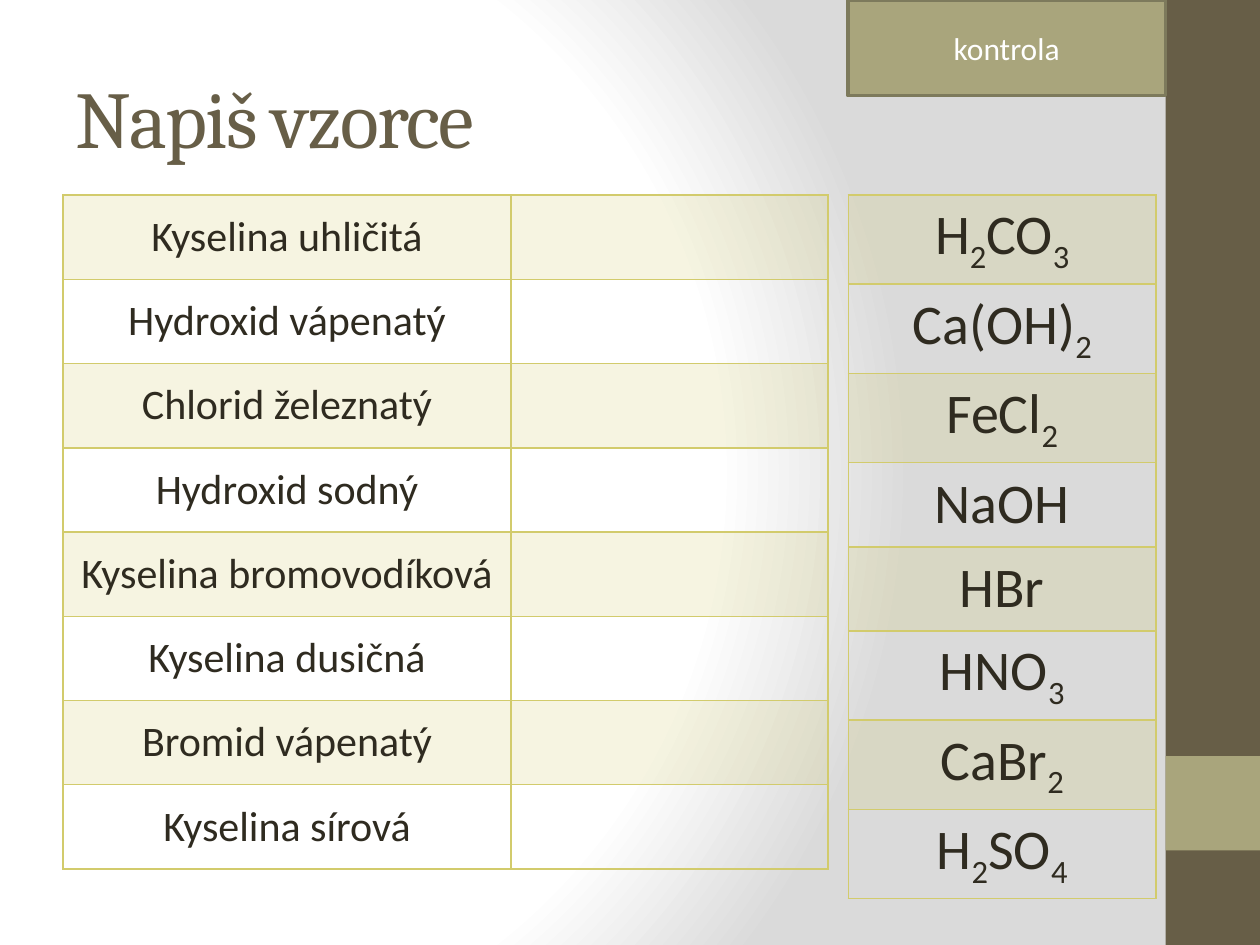
from dataclasses import dataclass
from itertools import groupby

from pptx import Presentation, util as u
from pptx.dml.color import RGBColor
from pptx.enum import shapes, text
from pptx.oxml import parse_xml

NS = 'xmlns:a="http://schemas.openxmlformats.org/drawingml/2006/main"'
HEX = {
    "dark": "675E47", "olive": "A9A57C", "edge": "7D7A5C", "line": "D2CB6C",
    "ink": "2F2B20", "white": "FFFFFF", "gray": "DADADA",
}
PAIRS = [
    ("Kyselina uhličitá", "H2CO3"),
    ("Hydroxid vápenatý", "Ca(OH)2"),
    ("Chlorid železnatý", "FeCl2"),
    ("Hydroxid sodný", "NaOH"),
    ("Kyselina bromovodíková", "HBr"),
    ("Kyselina dusičná", "HNO3"),
    ("Bromid vápenatý", "CaBr2"),
    ("Kyselina sírová", "H2SO4"),
]
TOP, ROW = 111.5, 48.15


@dataclass
class Box:
    left: float
    top: float
    width: float
    height: float

    def pts(self) -> list:
        return [u.Pt(n) for n in (self.left, self.top, self.width, self.height)]


@dataclass
class Grid:
    left: float
    cols: list
    rows: list
    size: float
    subs: bool = False


def rgb(name: str) -> RGBColor:
    return RGBColor.from_string(HEX[name])


def add_run(para, words: str, size: float, color: str, font: str = "Calibri"):
    run = para.add_run()
    run.text = words
    for key, val in {"size": u.Pt(size), "name": font, "bold": False}.items():
        setattr(run.font, key, val)
    run.font.color.rgb = rgb(color)
    return run


def add_rect(slide, box: Box, color: str, edge: str = ""):
    rect = slide.shapes.add_shape(shapes.MSO_SHAPE.RECTANGLE, *box.pts())
    rect.shadow.inherit = False
    rect.fill.solid()
    rect.fill.fore_color.rgb = rgb(color)
    if edge:
        rect.line.color.rgb = rgb(edge)
        rect.line.width = u.Pt(2)
    else:
        rect.line.fill.background()
    return rect


def style_cell(cell, tint: bool) -> None:
    """Draw all four borders and tint the cell at 20 % or leave it clear."""
    props = cell._tc.get_or_add_tcPr()
    for side in ("lnL", "lnR", "lnT", "lnB"):
        props.append(parse_xml(
            f'<a:{side} {NS} w="12700"><a:solidFill>'
            f'<a:srgbClr val="{HEX["line"]}"/></a:solidFill></a:{side}>'))
    if tint:
        props.append(parse_xml(
            f'<a:solidFill {NS}><a:srgbClr val="{HEX["line"]}">'
            '<a:alpha val="20000"/></a:srgbClr></a:solidFill>'))
    else:
        cell.fill.background()
    cell.vertical_anchor = text.MSO_ANCHOR.MIDDLE


def add_grid(slide, grid: Grid) -> None:
    count = len(grid.rows)
    box = Box(grid.left, TOP, sum(grid.cols), ROW * count)
    table = slide.shapes.add_table(count, len(grid.cols), *box.pts()).table
    table.first_row = table.horz_banding = False
    for col, width in zip(table.columns, grid.cols):
        col.width = u.Pt(width)
    for i, (row, words) in enumerate(zip(table.rows, grid.rows)):
        row.height = u.Pt(ROW)
        for cell in row.cells:
            style_cell(cell, i % 2 == 0)
        para = row.cells[0].text_frame.paragraphs[0]
        para.alignment = text.PP_ALIGN.CENTER
        if not grid.subs:
            add_run(para, words, grid.size, "ink")
            continue
        for low, part in groupby(words, str.isdigit):
            run = add_run(para, "".join(part), grid.size, "ink")
            if low:
                run.font._element.set("baseline", "-25000")


def add_back(slide) -> None:
    """Fill the background with a circular gradient."""
    fill = slide.background.fill
    fill.solid()
    fill.fore_color.rgb = rgb("white")
    stops = "".join(
        f'<a:gs pos="{pos}000"><a:srgbClr val="{HEX[name]}"/></a:gs>'
        for pos, name in ((0, "white"), (75, "white"), (100, "gray")))
    props = slide._element.cSld.bg.bgPr
    props.replace(props[0], parse_xml(
        f'<a:gradFill {NS} rotWithShape="1"><a:gsLst>{stops}</a:gsLst>'
        '<a:path path="circle"><a:fillToRect l="20000" t="50000" '
        'r="100000" b="50000"/></a:path></a:gradFill>'))


def add_title(slide) -> None:
    frame = slide.shapes.add_textbox(*Box(36, 21.6, 273, 90).pts()).text_frame
    frame.word_wrap = True
    frame.vertical_anchor = text.MSO_ANCHOR.MIDDLE
    run = add_run(frame.paragraphs[0], "Napiš vzorce", 46, "dark", "Cambria")
    run.font._element.set("spc", "-100")


def add_check(slide) -> None:
    rect = add_rect(slide, Box(484.5, 0, 181.5, 54.7), "olive", "edge")
    frame = rect.text_frame
    frame.vertical_anchor = text.MSO_ANCHOR.MIDDLE
    para = frame.paragraphs[0]
    para.alignment = text.PP_ALIGN.CENTER
    add_run(para, "kontrola", 18, "white")


def main() -> None:
    deck = Presentation()
    deck.slide_width, deck.slide_height = u.Pt(720), u.Pt(540)
    slide = deck.slides.add_slide(deck.slide_layouts[6])
    add_back(slide)
    add_rect(slide, Box(666, 0, 54, 540), "dark")
    add_rect(slide, Box(666, 432, 54, 54), "olive")
    add_title(slide)
    names, signs = zip(*PAIRS)
    add_grid(slide, Grid(36, [256, 181.3], names, 24))
    add_grid(slide, Grid(484.75, [175.75], signs, 32, True))
    add_check(slide)
    deck.save("out.pptx")


if __name__ == "__main__":
    main()
